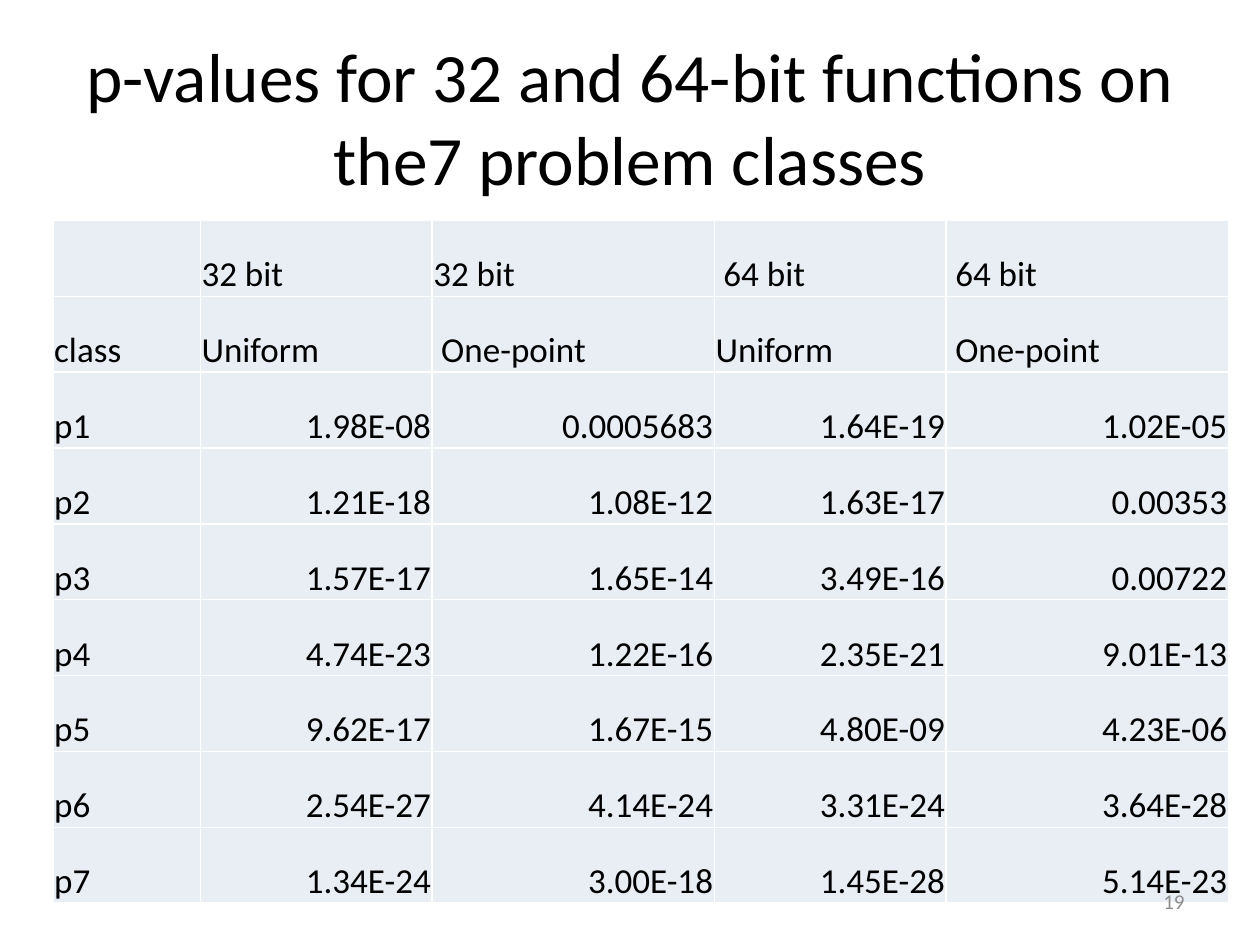
from lxml.etree import SubElement
from pptx import Presentation
from pptx.dml.color import RGBColor
from pptx.enum.text import MSO_ANCHOR as Anchor, PP_ALIGN as Align
from pptx.oxml.ns import qn
from pptx.util import Inches, Pt

BLACK = RGBColor(0x00, 0x00, 0x00)
GRAY = RGBColor(0x8C, 0x8C, 0x8C)
WHITE = RGBColor(0xFF, 0xFF, 0xFF)
CELL_FILL = RGBColor(0xE9, 0xED, 0xF4)

COLUMN_WIDTHS = [1.17, 1.84, 2.24, 1.84, 2.24]
HEADER_ROWS = 2
ROWS = [
    ["", "32 bit", "32 bit", " 64 bit", " 64 bit"],
    ["class", "Uniform", " One-point", "Uniform", " One-point"],
    ["p1", "1.98E-08", "0.0005683", "1.64E-19", "1.02E-05"],
    ["p2", "1.21E-18", "1.08E-12", "1.63E-17", "0.00353"],
    ["p3", "1.57E-17", "1.65E-14", "3.49E-16", "0.00722"],
    ["p4", "4.74E-23", "1.22E-16", "2.35E-21", "9.01E-13"],
    ["p5", "9.62E-17", "1.67E-15", "4.80E-09", "4.23E-06"],
    ["p6", "2.54E-27", "4.14E-24", "3.31E-24", "3.64E-28"],
    ["p7", "1.34E-24", "3.00E-18", "1.45E-28", "5.14E-23"],
]


def write_text(text_frame, text, size=20, color=BLACK, align=Align.LEFT):
    paragraph = text_frame.paragraphs[0]
    paragraph.alignment = align
    paragraph.font.size = Pt(size)
    if text:
        run = paragraph.add_run()
        run.text = text
        run.font.name = "Calibri"
        run.font.size = Pt(size)
        run.font.color.rgb = color


def add_borders(cell, color=WHITE, width=1):
    properties = cell._tc.get_or_add_tcPr()
    for side in ("a:lnL", "a:lnR", "a:lnT", "a:lnB"):
        line = SubElement(properties, qn(side), w=str(Pt(width)))
        fill = SubElement(line, qn("a:solidFill"))
        SubElement(fill, qn("a:srgbClr"), val=str(color))


presentation = Presentation()
presentation.slide_width = Inches(10)
presentation.slide_height = Inches(7.5)
slide = presentation.slides.add_slide(presentation.slide_layouts[5])

# Title
title = slide.shapes.title
title.left, title.top = Inches(0.5), Inches(0.3)
title.width, title.height = Inches(9), Inches(1.25)
title.text_frame.vertical_anchor = Anchor.MIDDLE
write_text(title.text_frame, "p-values for 32 and 64-bit functions on the7 problem classes",
           size=39.6, align=Align.CENTER)

# Table of p-values
table = slide.shapes.add_table(
    len(ROWS), len(COLUMN_WIDTHS), Inches(0.42), Inches(1.75),
    Inches(sum(COLUMN_WIDTHS)), Inches(5.42)).table
for column, width in zip(table.columns, COLUMN_WIDTHS):
    column.width = Inches(width)
for row_index, row in enumerate(ROWS):
    for column_index, text in enumerate(row):
        cell = table.cell(row_index, column_index)
        add_borders(cell)
        cell.fill.solid()
        cell.fill.fore_color.rgb = CELL_FILL
        cell.vertical_anchor = Anchor.BOTTOM
        cell.margin_left = cell.margin_right = cell.margin_top = Inches(0.01)
        cell.margin_bottom = 0
        is_number = row_index >= HEADER_ROWS and column_index > 0
        write_text(cell.text_frame, text, align=Align.RIGHT if is_number else Align.LEFT)

# Slide number
number_box = slide.shapes.add_textbox(Inches(7.17), Inches(6.95), Inches(2.33), Inches(0.4))
number_box.text_frame.word_wrap = True
number_box.text_frame.vertical_anchor = Anchor.MIDDLE
write_text(number_box.text_frame, "19", size=12, color=GRAY, align=Align.RIGHT)

presentation.save("out.pptx")
